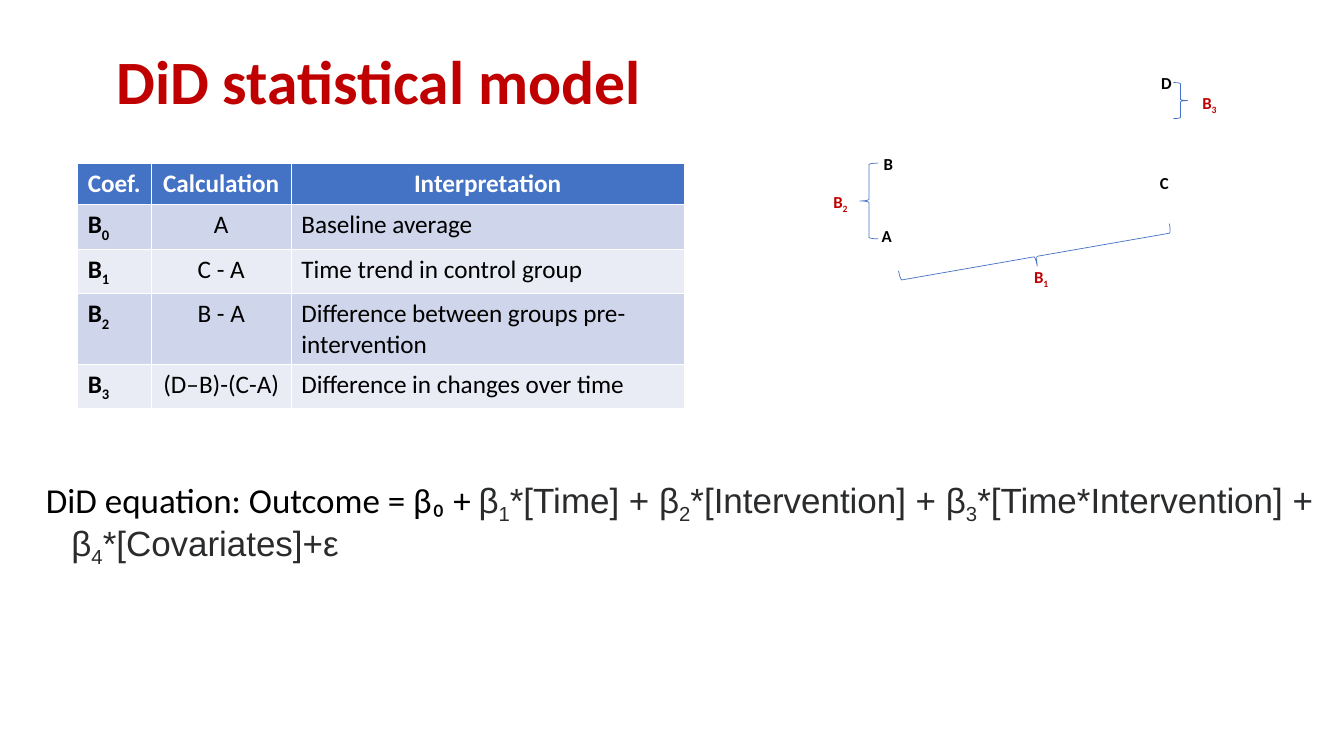
from dataclasses import dataclass

from pptx import Presentation
from pptx.dml.color import RGBColor
from pptx.enum.shapes import MSO_SHAPE
from pptx.enum.text import MSO_ANCHOR, PP_ALIGN
from pptx.util import Cm, Pt


@dataclass(frozen=True)
class Theme:
    font: str = "Calibri"
    alt: str = "Arial"
    red: str = "C00000"
    black: str = "000000"
    grey: str = "2A2B2D"
    white: str = "FFFFFF"
    blue: str = "4472C4"
    bands: tuple = ("CFD5EA", "E9EBF5")
    title: int = 44
    body: int = 25
    table: int = 18
    label: int = 12


class Board:
    def __init__(self, slide, theme):
        self.slide = slide
        self.theme = theme

    def style(self, font, size=None, color=None, bold=None, name=None):
        font.name = name or self.theme.font
        font.bold = bold
        if size:
            font.size = Pt(size)
        if color:
            font.color.rgb = RGBColor.from_string(color)

    def add_runs(self, par, text):
        """Add text in which bars enclose each subscript; return the runs."""
        runs = []
        for i, part in enumerate(text.split("|")):
            if part:
                run = par.add_run()
                run.text = part
                if i % 2:
                    run.font._element.set("baseline", "-25000")
                runs.append(run)
        return runs

    def text(self, x, y, w, h, text, size, color, bold=True):
        box = self.slide.shapes.add_textbox(Cm(x), Cm(y), Cm(w), Cm(h))
        box.text_frame.word_wrap = True
        par = box.text_frame.paragraphs[0]
        self.style(par.font, size, color, bold)
        self.add_runs(par, text)
        return box.text_frame

    def title(self, x, y, w, h, text):
        frame = self.text(x, y, w, h, text, self.theme.title, self.theme.red)
        frame.vertical_anchor = MSO_ANCHOR.MIDDLE
        par = frame.paragraphs[0]
        par.alignment = PP_ALIGN.CENTER
        par.line_spacing = 0.9

    def formula(self, x, y, w, h, lead, rest):
        """Set a lead-in in the main font and the terms in the second one."""
        look = self.theme
        frame = self.text(x, y, w, h, "", look.body, None, False)
        par = frame.paragraphs[0]
        par.line_spacing = 0.9
        props = par._p.get_or_add_pPr()
        props.set("marL", str(Cm(0.64)))
        props.set("indent", str(Cm(-0.64)))
        for run in self.add_runs(par, lead):
            self.style(run.font, color=look.black)
        for run in self.add_runs(par, rest):
            self.style(run.font, color=look.grey, name=look.alt)

    def label(self, x, y, text, color):
        self.text(x, y, 1.14, 0.76, text, self.theme.label, color)

    def brace(self, kind, x, y, w, h, turn=0):
        mark = self.slide.shapes.add_shape(kind, Cm(x), Cm(y), Cm(w), Cm(h))
        mark.shadow.inherit = False
        mark.fill.background()
        mark.line.color.rgb = RGBColor.from_string(self.theme.blue)
        mark.line.width = Pt(0.5)
        mark.rotation = turn

    def table(self, x, y, widths, height, rows):
        look = self.theme
        grid = self.slide.shapes.add_table(
            len(rows), len(widths), Cm(x), Cm(y),
            Cm(sum(widths)), Cm(height * len(rows))).table
        for col, width in zip(grid.columns, widths):
            col.width = Cm(width)
        for r, row in enumerate(rows):
            for c, text in enumerate(row):
                cell = grid.cell(r, c)
                cell.fill.solid()
                fill = look.bands[(r - 1) % 2] if r else look.blue
                cell.fill.fore_color.rgb = RGBColor.from_string(fill)
                par = cell.text_frame.paragraphs[0]
                if c == 1 or (r == 0 and c == 2):
                    par.alignment = PP_ALIGN.CENTER
                color = look.black if r else look.white
                self.style(par.font, look.table, color, r == 0 or c == 0)
                self.add_runs(par, text)


def main():
    deck = Presentation()
    deck.slide_width, deck.slide_height = Cm(33.87), Cm(19.05)
    look = Theme()
    board = Board(deck.slides.add_slide(deck.slide_layouts[6]), look)

    board.title(2.34, 1.02, 14.76, 2.24, "DiD statistical model ")
    board.formula(
        0.91, 11.94, 33.58, 4.7, "DiD equation: Outcome = β₀ + ",
        "β|1|*[Time] + β|2|*[Intervention] + β|3|*[Time*Intervention] + "
        "β|4|*[Covariates]+ε")
    board.table(1.96, 4.13, (1.85, 3.53, 9.9), 1.03, (
        ("Coef.", "Calculation", "Interpretation"),
        ("B|0|", "A", "Baseline average"),
        ("B|1|", "C - A", "Time trend in control group"),
        ("B|2|", "B - A", "Difference between groups pre-intervention"),
        ("B|3|", "(D–B)-(C-A)", "Difference in changes over time")))

    board.brace(MSO_SHAPE.LEFT_BRACE, 21.67, 4.11, 0.46, 1.91)
    board.brace(MSO_SHAPE.LEFT_BRACE, 25.86, 3, 0.48, 6.93, 260.1)
    board.brace(MSO_SHAPE.RIGHT_BRACE, 29.57, 2.08, 0.36, 0.91)

    for x, y, text in ((20.75, 4.7, "B|2|"), (25.81, 6.6, "B|1|"),
                       (30.05, 2.21, "B|3|")):
        board.label(x, y, text, look.red)
    for x, y, text in ((21.97, 5.56, "A"), (22.02, 3.76, "B"),
                       (28.98, 4.22, "C"), (29.01, 1.7, "D")):
        board.label(x, y, text, look.black)
    deck.save("out.pptx")


if __name__ == "__main__":
    main()
